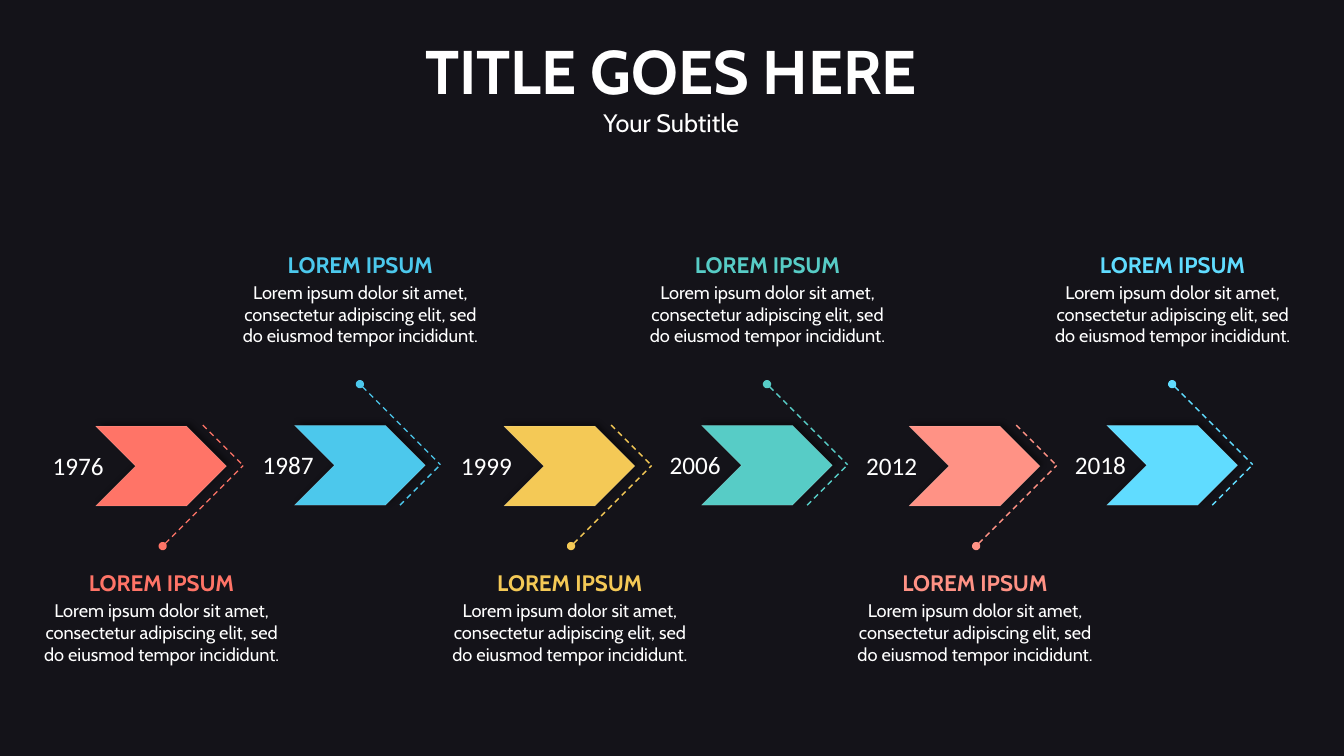
from dataclasses import dataclass

from lxml import etree
from pptx import Presentation
from pptx.dml.color import RGBColor
from pptx.enum.dml import MSO_LINE
from pptx.enum.shapes import MSO_CONNECTOR, MSO_SHAPE
from pptx.enum.text import MSO_ANCHOR, MSO_AUTO_SIZE, PP_ALIGN
from pptx.oxml.ns import qn
from pptx.util import Cm, Pt

CHEVRON = MSO_SHAPE.CHEVRON
STRAIGHT = MSO_CONNECTOR.STRAIGHT
DASH = MSO_LINE.DASH
CENTER = PP_ALIGN.CENTER
TOP = MSO_ANCHOR.TOP
NO_FIT = MSO_AUTO_SIZE.NONE
TITLE_ONLY = 5


@dataclass(frozen=True)
class Theme:
    """Colours, fonts and type sizes of the slide."""
    background: str = "141319"
    text: str = "FFFFFF"
    shadow: str = "000000"
    font: str = "Cabin"
    year_font: str = "Calibri"
    title: int = 44
    subtitle: int = 18
    year: int = 18
    heading: int = 16
    body: int = 13


@dataclass(frozen=True)
class Side:
    """Vertical places and horizontal offsets, in cm, for one side of the timeline."""
    direction: int
    chevron_top: float
    year_offset: float
    year_top: float
    tip_offset: float
    tip_top: float
    caption_top: float


THEME = Theme()
BELOW = Side(1, 10.74, -1.47, 11.23, 3.72, 11.73, 14.35)
ABOVE = Side(-1, 10.72, -1.19, 11.2, 3.68, 11.71, 6.32)
CHEVRON_SIZE = Cm(3.3), Cm(2.01)
CAPTION_OFFSET = -1.3
LONG_RUN = 2.03
SHORT_RUN = 1.02
HEADING = "LOREM IPSUM"
BODY = ("Lorem ipsum dolor sit amet, consectetur adipiscing elit, "
        "sed do eiusmod tempor incididunt.")
MILESTONES = [
    ("1976", 2.41, "FF7467", BELOW),
    ("1987", 7.42, "4CC8EC", ABOVE),
    ("1999", 12.7, "F4C956", BELOW),
    ("2006", 17.68, "57CCC6", ABOVE),
    ("2012", 22.91, "FF9285", BELOW),
    ("2018", 27.89, "60DCFF", ABOVE),
]


def color(value):
    """Turn a hex string into a colour."""
    return RGBColor.from_string(value)


def add_child(parent, tag, **attributes):
    """Append a drawing element with its attributes."""
    child = etree.SubElement(parent, qn(tag))
    for name, value in attributes.items():
        child.set(name, str(value))
    return child


def add_span(para, text, size, tint=THEME.text, bold=False, font=THEME.font):
    """Add one formatted run to a centred paragraph."""
    para.alignment = CENTER
    span = para.add_run()
    span.text = text
    span.font.name = font
    span.font.size = Pt(size)
    span.font.bold = bold
    span.font.color.rgb = color(tint)


def add_title(page):
    """Fill the title placeholder with the title and the subtitle."""
    box = page.shapes.title
    box.left, box.top, box.width, box.height = Cm(9.27), Cm(0.71), Cm(15.29), Cm(2.9)
    frame = box.text_frame
    frame.auto_size = NO_FIT
    frame.vertical_anchor = TOP
    add_span(frame.paragraphs[0], "TITLE GOES HERE", THEME.title, bold=True)
    add_span(frame.add_paragraph(), "Your Subtitle", THEME.subtitle)


def add_chevron(page, left, top, tint):
    """Draw a chevron with a faint outline and a soft shadow."""
    box = page.shapes.add_shape(CHEVRON, Cm(left), Cm(top), *CHEVRON_SIZE)
    box.fill.solid()
    box.fill.fore_color.rgb = color(tint)
    box.line.width = Pt(0.5)
    box.line.color.rgb = color(THEME.text)
    box.shadow.inherit = False
    properties = box.element.spPr
    outline = properties.find(qn("a:ln")).find(qn("a:solidFill"))
    add_child(outline.find(qn("a:srgbClr")), "a:alpha", val=15000)
    shadow = add_child(properties.find(qn("a:effectLst")), "a:outerShdw",
                       blurRad=int(Pt(4)), dist=int(Pt(3)), dir=315 * 60000,
                       algn="bl", rotWithShape=0)
    add_child(add_child(shadow, "a:srgbClr", val=THEME.shadow), "a:alpha", val=40000)


def add_dashes(page, start, end, tint, dot=False):
    """Draw a dashed line, with a dot at its start if asked."""
    connector = page.shapes.add_connector(STRAIGHT, *map(Cm, start + end))
    connector.line.width = Pt(1)
    connector.line.color.rgb = color(tint)
    connector.line.dash_style = DASH
    properties = connector.element.spPr
    if dot:
        add_child(properties.find(qn("a:ln")), "a:headEnd", type="oval")
    add_child(properties, "a:effectLst")


def add_caption(page, left, top, tint):
    """Add a coloured heading with its text."""
    box = page.shapes.add_textbox(Cm(left), Cm(top), Cm(5.92), Cm(3))
    frame = box.text_frame
    frame.word_wrap = True
    frame.margin_left = frame.margin_top = frame.margin_right = frame.margin_bottom = 0
    add_span(frame.paragraphs[0], HEADING, THEME.heading, tint, bold=True)
    para = frame.add_paragraph()
    para.space_before = Pt(2.4)
    add_span(para, BODY, THEME.body)


def add_year(page, left, top, year):
    """Add the year beside a chevron."""
    box = page.shapes.add_textbox(Cm(left), Cm(top), Cm(2.06), Cm(1.02))
    box.text_frame.word_wrap = True
    add_span(box.text_frame.paragraphs[0], year, THEME.year, font=THEME.year_font)


def add_milestone(page, year, left, tint, side):
    """Place a chevron with its dashed pointer, caption and year."""
    add_chevron(page, left, side.chevron_top, tint)
    tip = left + side.tip_offset, side.tip_top
    short_start = tip[0] - SHORT_RUN, tip[1] - side.direction * SHORT_RUN
    long_start = tip[0] - LONG_RUN, tip[1] + side.direction * LONG_RUN
    add_dashes(page, short_start, tip, tint)
    add_dashes(page, long_start, tip, tint, dot=True)
    add_caption(page, left + CAPTION_OFFSET, side.caption_top, tint)
    add_year(page, left + side.year_offset, side.year_top, year)


def main():
    """Build the timeline slide and save it."""
    deck = Presentation()
    deck.slide_width, deck.slide_height = Cm(33.87), Cm(19.05)
    page = deck.slides.add_slide(deck.slide_layouts[TITLE_ONLY])
    page.background.fill.solid()
    page.background.fill.fore_color.rgb = color(THEME.background)
    add_title(page)
    for milestone in MILESTONES:
        add_milestone(page, *milestone)
    deck.save("out.pptx")


if __name__ == "__main__":
    main()
